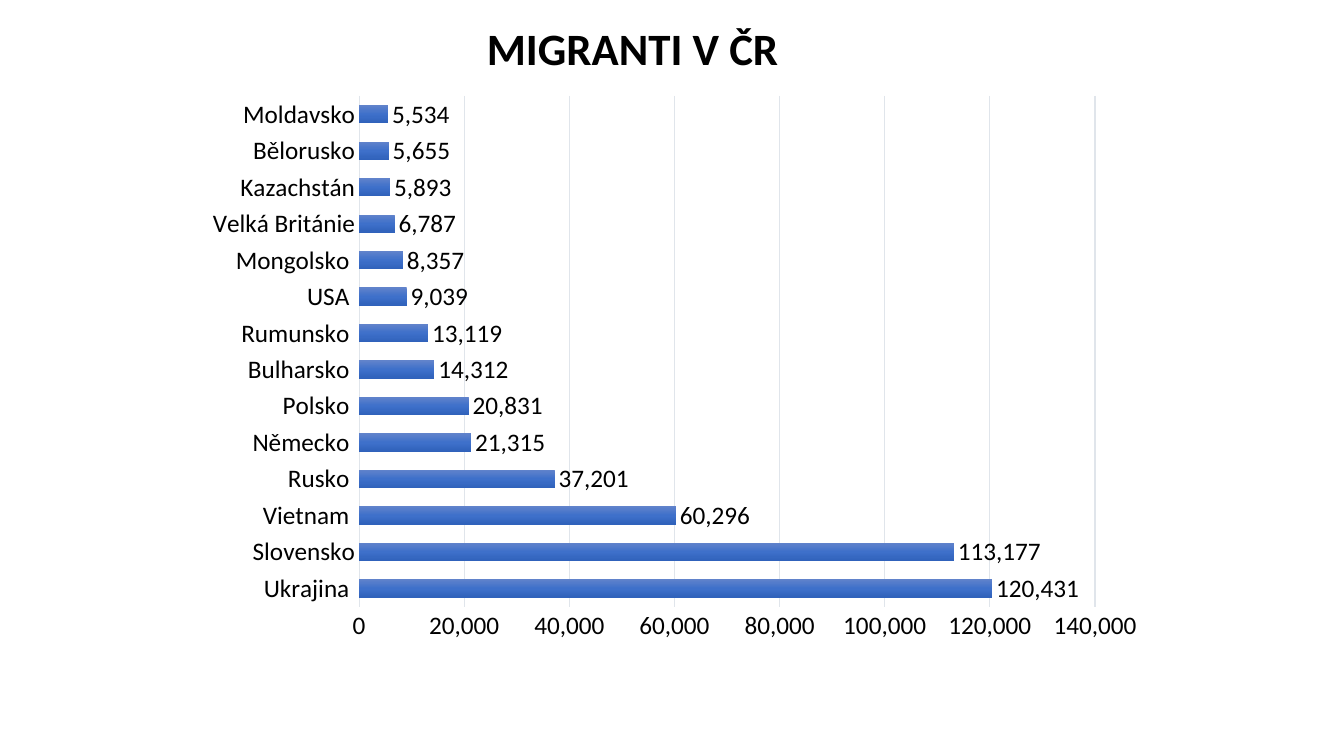
import copy

import pptx
import pptx.chart.data
import pptx.dml.color
import pptx.enum.chart
import pptx.enum.text
import pptx.oxml
import pptx.oxml.ns
import pptx.util

COLORS = {
    "text": "000000",
    "grid": "E0E5EB",
    "bar_top": "6183CB",
    "bar_middle": "3E70CA",
    "bar_bottom": "3062BB",
}
FONT = "Calibri"
NUMBER_FORMAT = "#,##0"
SLIDE_SIZE = (13.33, 7.5)
TITLE_BOX = (0.31, 0.22, 11.93, 0.33)
CHART_BOX = (1.95, 0.84, 9.48, 5.63)
PLOT_SHARES = {"x": 0.17, "y": 0.02, "w": 0.77, "h": 0.9}
MIGRANTS = [
    ("Ukrajina ", 120431),
    ("Slovensko", 113177),
    ("Vietnam ", 60296),
    ("Rusko ", 37201),
    ("Německo ", 21315),
    ("Polsko ", 20831),
    ("Bulharsko ", 14312),
    ("Rumunsko ", 13119),
    (" USA ", 9039),
    ("Mongolsko ", 8357),
    ("Velká Británie", 6787),
    ("Kazachstán", 5893),
    ("Bělorusko", 5655),
    ("Moldavsko", 5534),
]


def rgb(name):
    """Return the named colour."""
    return pptx.dml.color.RGBColor.from_string(COLORS[name])


def set_font(font, size):
    """Apply the slide's typeface and text colour."""
    font.name = FONT
    font.size = pptx.util.Pt(size)
    font.color.rgb = rgb("text")


def set_grid_line(line):
    """Make a line thin and pale."""
    line.color.rgb = rgb("grid")
    line.width = pptx.util.Pt(0.75)


def place_title(title, box):
    """Move the title placeholder into its box and write the heading."""
    title.left, title.top, title.width, title.height = map(pptx.util.Inches, box)
    frame = title.text_frame
    frame.text = "MIGRANTI V ČR"
    frame.word_wrap = True
    frame.auto_size = pptx.enum.text.MSO_AUTO_SIZE.NONE
    frame.vertical_anchor = pptx.enum.text.MSO_ANCHOR.TOP
    heading = frame.paragraphs[0]
    heading.alignment = pptx.enum.text.PP_ALIGN.CENTER
    heading.line_spacing = 0.9
    heading.space_before = pptx.util.Pt(10)
    set_font(heading.font, 32)
    heading.font.bold = True


def fill_bars(fill):
    """Shade the bars from top to bottom in three stops."""
    fill.gradient()
    fill.gradient_angle = 270
    stop_list = fill._fill._gradFill.gsLst
    stop_list.insert(1, copy.deepcopy(stop_list[0]))
    shades = [(0, "bar_top"), (0.5, "bar_middle"), (1, "bar_bottom")]
    for stop, (position, shade) in zip(fill.gradient_stops, shades):
        stop.position = position
        stop.color.rgb = rgb(shade)


def set_plot_layout(chart, shares):
    """Fix the inner plot area as shares of the chart."""
    plot_area = chart._chartSpace.chart.plotArea
    for layout in plot_area.findall(pptx.oxml.ns.qn("c:layout")):
        plot_area.remove(layout)
    modes = '<c:layoutTarget val="inner"/><c:xMode val="edge"/><c:yMode val="edge"/>'
    sizes = "".join(f'<c:{key} val="{share}"/>' for key, share in shares.items())
    plot_area.insert(0, pptx.oxml.parse_xml(
        f'<c:layout {pptx.oxml.ns.nsdecls("c")}>'
        f"<c:manualLayout>{modes}{sizes}</c:manualLayout></c:layout>"
    ))


def format_axes(countries, counts):
    """Style the country axis and the count axis."""
    for axis in (countries, counts):
        axis.major_tick_mark = pptx.enum.chart.XL_TICK_MARK.NONE
        axis.minor_tick_mark = pptx.enum.chart.XL_TICK_MARK.NONE
        set_font(axis.tick_labels.font, 18)
    set_grid_line(countries.format.line)
    counts.format.line.fill.background()
    counts.has_major_gridlines = True
    set_grid_line(counts.major_gridlines.format.line)
    counts.minimum_scale = 0
    counts.maximum_scale = 140000
    counts.major_unit = 20000
    counts.tick_labels.number_format = NUMBER_FORMAT
    counts.tick_labels.number_format_is_linked = False


def add_migrant_chart(slide, box):
    """Draw the bar chart of migrants by country in its box."""
    data = pptx.chart.data.CategoryChartData(number_format=NUMBER_FORMAT)
    countries, counts = zip(*MIGRANTS)
    data.categories = countries
    data.add_series("Series 1", counts)
    chart = slide.shapes.add_chart(
        pptx.enum.chart.XL_CHART_TYPE.BAR_CLUSTERED, *map(pptx.util.Inches, box), data
    ).chart
    chart.has_legend = False
    chart.has_title = False
    set_font(chart.font, 18)
    set_plot_layout(chart, PLOT_SHARES)
    format_axes(chart.category_axis, chart.value_axis)

    bars = chart.plots[0]
    bars.gap_width = 100
    bars.vary_by_categories = False
    fill_bars(bars.series[0].format.fill)
    labels = bars.series[0].data_labels
    labels.show_value = True
    labels.position = pptx.enum.chart.XL_LABEL_POSITION.OUTSIDE_END
    labels.number_format = NUMBER_FORMAT
    labels.number_format_is_linked = False
    set_font(labels.font, 18)


def main():
    """Build the slide and save it."""
    deck = pptx.Presentation()
    deck.slide_width, deck.slide_height = map(pptx.util.Inches, SLIDE_SIZE)
    slide = deck.slides.add_slide(deck.slide_layouts[5])
    add_migrant_chart(slide, CHART_BOX)
    place_title(slide.shapes.title, TITLE_BOX)
    deck.save("out.pptx")


if __name__ == "__main__":
    main()
